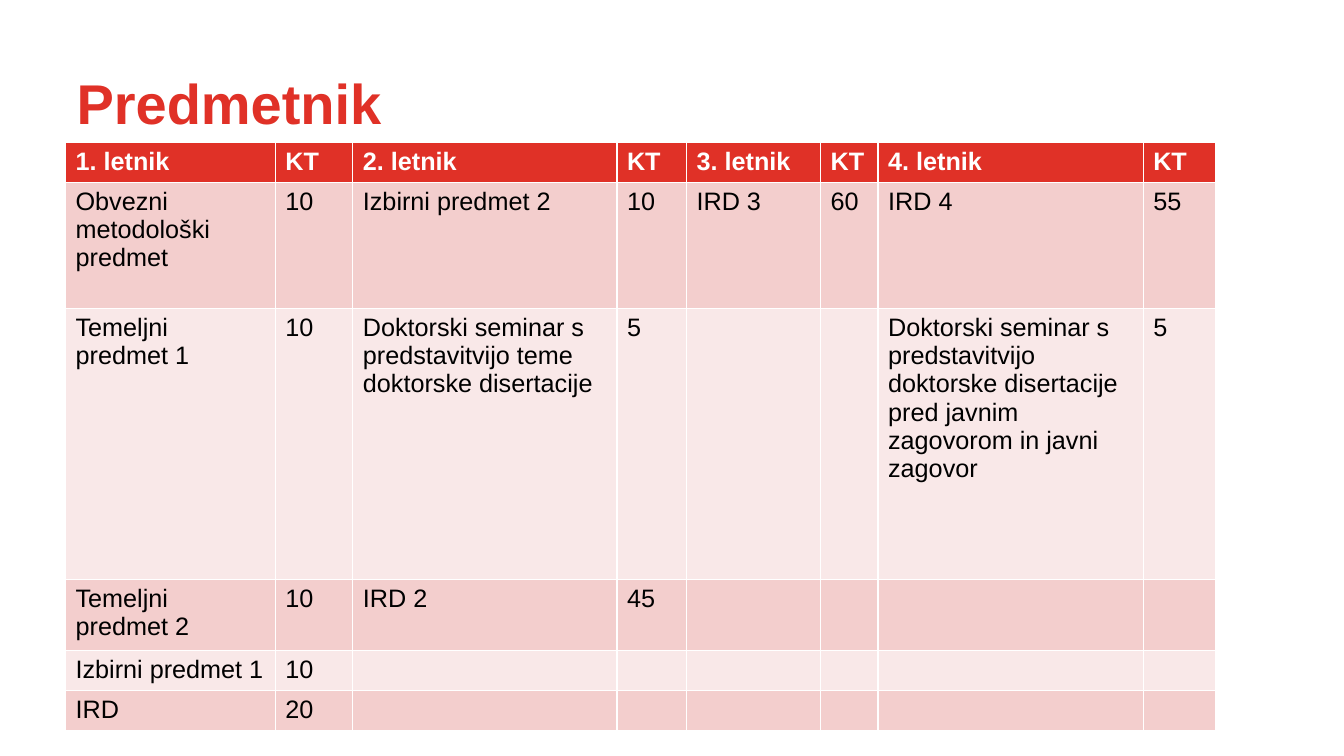
from dataclasses import dataclass

from pptx import Presentation
from pptx.dml.color import RGBColor as RGB
from pptx.enum.text import MSO_ANCHOR as Anchor
from pptx.util import Inches, Pt


@dataclass(frozen=True)
class Theme:
    font: str = "Arial"
    title_size: int = 40
    table_size: int = 18
    red: str = "E03127"
    white: str = "FFFFFF"
    black: str = "000000"
    bands: tuple = ("F9E8E8", "F3CECD")


theme = Theme()


def style_paragraph(paragraph, size, color, bold):
    font = paragraph.font
    font.name, font.size, font.bold = theme.font, Pt(size), bold
    font.color.rgb = RGB.from_string(color)


presentation = Presentation()
presentation.slide_width = Inches(13.33)
presentation.slide_height = Inches(7.5)
slide = presentation.slides.add_slide(presentation.slide_layouts[6])

# Title
title = slide.shapes.add_textbox(Inches(0.76), Inches(0.76), Inches(11.81), Inches(1.12))
frame = title.text_frame
frame.word_wrap = True
frame.vertical_anchor = Anchor.TOP
frame.margin_left = frame.margin_top = frame.margin_right = frame.margin_bottom = 0
paragraph = frame.paragraphs[0]
paragraph.text = "Predmetnik"
paragraph.line_spacing = 0.9
style_paragraph(paragraph, theme.title_size, theme.red, True)

# Curriculum: one subject and its credits for each of four years
curriculum = [
    ["1. letnik", "KT", "2. letnik", "KT", "3. letnik", "KT", "4. letnik", "KT"],
    ["Obvezni metodološki predmet", "10", "Izbirni predmet 2", "10", "IRD 3", "60", "IRD 4", "55"],
    ["Temeljni predmet 1", "10",
     "Doktorski seminar s predstavitvijo teme doktorske disertacije", "5", "", "",
     "Doktorski seminar s predstavitvijo doktorske disertacije pred javnim zagovorom in javni zagovor", "5"],
    ["Temeljni predmet 2", "10", "IRD 2", "45", "", "", "", ""],
    ["Izbirni predmet 1", "10", "", "", "", "", "", ""],
    ["IRD", "20", "", "", "", "", "", ""],
]
column_widths = [2.08, 0.77, 2.62, 0.69, 1.33, 0.57, 2.63, 0.72]
row_heights = [0.38, 1.25, 2.69, 0.67, 0.38, 0.38]

# Table; its default style supplies the white rules
table = slide.shapes.add_table(
    len(row_heights), len(column_widths), Inches(0.65), Inches(1.41),
    Inches(sum(column_widths)), Inches(sum(row_heights))).table
for column, width in zip(table.columns, column_widths):
    column.width = Inches(width)
for row_index, (row, height) in enumerate(zip(table.rows, row_heights)):
    row.height = Inches(height)
    is_header = row_index == 0
    fill_color = theme.red if is_header else theme.bands[row_index % 2]
    text_color = theme.white if is_header else theme.black
    for cell, text in zip(row.cells, curriculum[row_index]):
        cell.fill.solid()
        cell.fill.fore_color.rgb = RGB.from_string(fill_color)
        paragraph = cell.text_frame.paragraphs[0]
        paragraph.text = text
        style_paragraph(paragraph, theme.table_size, text_color, is_header)

presentation.save("out.pptx")
